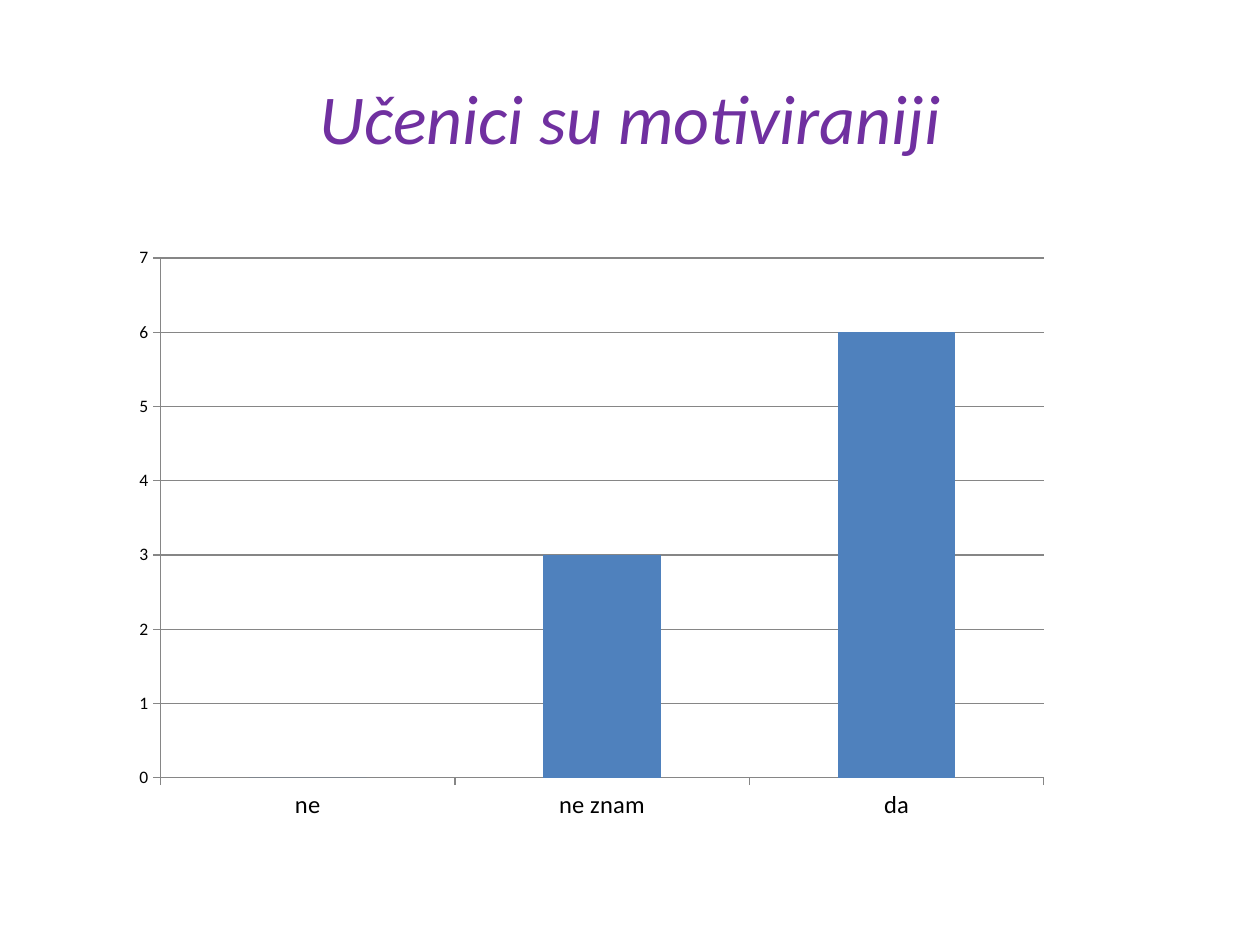
from pptx import Presentation
from pptx.chart.data import CategoryChartData
from pptx.dml.color import RGBColor
from pptx.enum.chart import XL_CHART_TYPE, XL_TICK_MARK
from pptx.enum.text import MSO_ANCHOR, PP_ALIGN
from pptx.oxml import parse_xml
from pptx.oxml.ns import nsdecls, qn
from pptx.util import Pt

SCALE = 914400 / 126
FONT = "Calibri"
GREY = "868686"


def px(*sizes):
    """Turn pixel lengths into EMU."""
    return [round(size * SCALE) for size in sizes]


def tint(color, code):
    """Set a colour from a hex string."""
    color.rgb = RGBColor.from_string(code)


def style(font, size, code):
    """Set the face, size and colour of a font."""
    font.name = FONT
    font.size = Pt(size)
    tint(font.color, code)


def rule(line):
    """Draw a thin grey chart line."""
    line.width = Pt(0.75)
    tint(line.color, GREY)


def add_title(slide, text, box):
    """Place and format the slide title."""
    title = slide.shapes.title
    title.left, title.top, title.width, title.height = px(*box)
    frame = title.text_frame
    frame.word_wrap = True
    frame.vertical_anchor = MSO_ANCHOR.MIDDLE
    para = frame.paragraphs[0]
    para.alignment = PP_ALIGN.CENTER
    run = para.add_run()
    run.text = text
    style(run.font, 40, "7030A0")
    run.font.italic = True


def set_plot(chart, area):
    """Fix the inner plot area as fractions of the chart."""
    plot = chart._chartSpace.chart.plotArea
    for old in plot.findall(qn("c:layout")):
        plot.remove(old)
    modes = "".join(f'<c:{key}Mode val="edge"/>' for key in "xy")
    sizes = "".join(f'<c:{key} val="{val}"/>' for key, val in zip("xywh", area))
    plot.insert(0, parse_xml(
        f'<c:layout {nsdecls("c")}><c:manualLayout><c:layoutTarget val="inner"/>'
        f"{modes}{sizes}</c:manualLayout></c:layout>"))


def set_axis(axis, size, grid):
    """Format an axis with its labels and grid."""
    axis.has_major_gridlines = grid
    if grid:
        rule(axis.major_gridlines.format.line)
    axis.major_tick_mark = XL_TICK_MARK.OUTSIDE
    axis.minor_tick_mark = XL_TICK_MARK.NONE
    rule(axis.format.line)
    style(axis.tick_labels.font, size, "000000")


def add_bars(slide, votes, box):
    """Add the column chart of the answers."""
    data = CategoryChartData()
    data.categories = list(votes)
    data.add_series("Series 1", list(votes.values()))
    kind = XL_CHART_TYPE.COLUMN_CLUSTERED
    chart = slide.shapes.add_chart(kind, *px(*box), data).chart
    chart.has_legend = False
    chart.has_title = False
    style(chart.font, 10, "000000")
    set_axis(chart.category_axis, 14, False)
    set_axis(chart.value_axis, 10, True)
    scale = chart.value_axis
    scale.minimum_scale, scale.maximum_scale, scale.major_unit = 0, 7, 1
    plot = chart.plots[0]
    plot.gap_width = 150
    plot.vary_by_categories = False
    fill = plot.series[0].format.fill
    fill.solid()
    tint(fill.fore_color, "4F81BD")
    set_plot(chart, (0.086, 0.061, 0.779, 0.833))


def main():
    """Build and save the slide."""
    deck = Presentation()
    deck.slide_width, deck.slide_height = px(1260, 945)
    slide = deck.slides.add_slide(deck.slide_layouts[5])
    add_title(slide, "Učenici su motiviraniji", (63, 38, 1134, 158))
    add_bars(slide, {"ne": 0, "ne znam": 3, "da": 6}, (63, 220, 1134, 624))
    deck.save("out.pptx")


if __name__ == "__main__":
    main()
